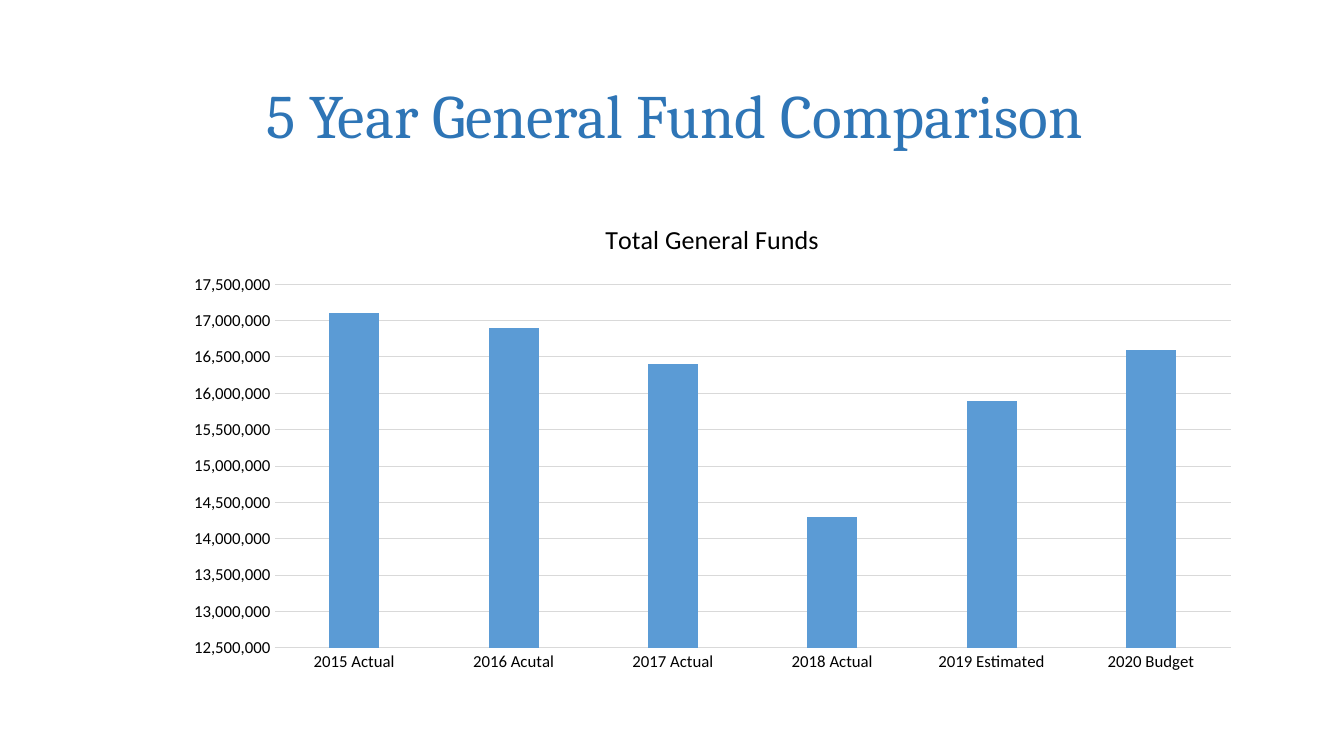
from pptx import Presentation
from pptx.chart.data import CategoryChartData
from pptx.dml.color import RGBColor
from pptx.enum.chart import XL_CHART_TYPE as ChartType, XL_TICK_MARK as TickMark
from pptx.enum.text import MSO_ANCHOR as Anchor, PP_ALIGN as Align
from pptx.util import Inches, Pt

TITLE_BLUE = RGBColor(0x2E, 0x75, 0xB6)
BAR_BLUE = RGBColor(0x5B, 0x9B, 0xD5)
GRID_GRAY = RGBColor(0xD9, 0xD9, 0xD9)
BLACK = RGBColor(0x00, 0x00, 0x00)

FUNDS_BY_YEAR = {
    "2015 Actual": 17_100_000,
    "2016 Acutal": 16_900_000,
    "2017 Actual": 16_400_000,
    "2018 Actual": 14_300_000,
    "2019 Estimated": 15_900_000,
    "2020 Budget": 16_600_000,
}


class FundSlide:
    heading_font = "Cambria"
    chart_font = "Calibri"

    def __init__(self, deck):
        self.slide = deck.slides.add_slide(deck.slide_layouts[5])

    def style(self, font, name, size, color):
        font.name, font.size, font.bold = name, Pt(size), False
        font.color.rgb = color

    def hairline(self, line):
        line.color.rgb = GRID_GRAY
        line.width = Pt(0.75)

    def title(self, text, left, top, width, height):
        heading = self.slide.shapes.title
        heading.left, heading.top = Inches(left), Inches(top)
        heading.width, heading.height = Inches(width), Inches(height)
        heading.text_frame.text = text
        heading.text_frame.vertical_anchor = Anchor.MIDDLE
        paragraph = heading.text_frame.paragraphs[0]
        paragraph.alignment = Align.LEFT
        self.style(paragraph.font, self.heading_font, 44, TITLE_BLUE)

    def column_chart(self, name, values, left, top, width, height):
        data = CategoryChartData(number_format="#,##0")
        data.categories = list(values)
        data.add_series(name, list(values.values()))
        chart = self.slide.shapes.add_chart(
            ChartType.COLUMN_CLUSTERED, Inches(left), Inches(top),
            Inches(width), Inches(height), data).chart
        self.style(chart.font, self.chart_font, 10, BLACK)
        chart.has_legend = False

        # Chart title
        chart.has_title = True
        caption = chart.chart_title.text_frame
        caption.text = name
        self.style(caption.paragraphs[0].font, self.chart_font, 18.6, BLACK)
        chart.chart_title.include_in_layout = False

        # Columns
        plot = chart.plots[0]
        plot.gap_width, plot.overlap = 219, -27
        plot.vary_by_categories = False
        columns = plot.series[0].format.fill
        columns.solid()
        columns.fore_color.rgb = BAR_BLUE

        # Axes
        years, dollars = chart.category_axis, chart.value_axis
        for axis in (years, dollars):
            axis.major_tick_mark = axis.minor_tick_mark = TickMark.NONE
            self.style(axis.tick_labels.font, self.chart_font, 12, BLACK)
        self.hairline(years.format.line)
        dollars.format.line.fill.background()
        dollars.has_major_gridlines = True
        self.hairline(dollars.major_gridlines.format.line)
        dollars.minimum_scale, dollars.maximum_scale = 12_500_000, 17_500_000
        dollars.major_unit = 500_000
        dollars.tick_labels.number_format = "#,##0"
        dollars.tick_labels.number_format_is_linked = False


def main():
    deck = Presentation()
    deck.slide_width, deck.slide_height = Inches(13.33), Inches(7.5)
    page = FundSlide(deck)
    page.title("5 Year General Fund Comparison", 2.54, 0.4, 9.88, 1.45)
    page.column_chart("Total General Funds", FUNDS_BY_YEAR, 1.71, 2, 10.71, 4.76)
    deck.save("out.pptx")


if __name__ == "__main__":
    main()
